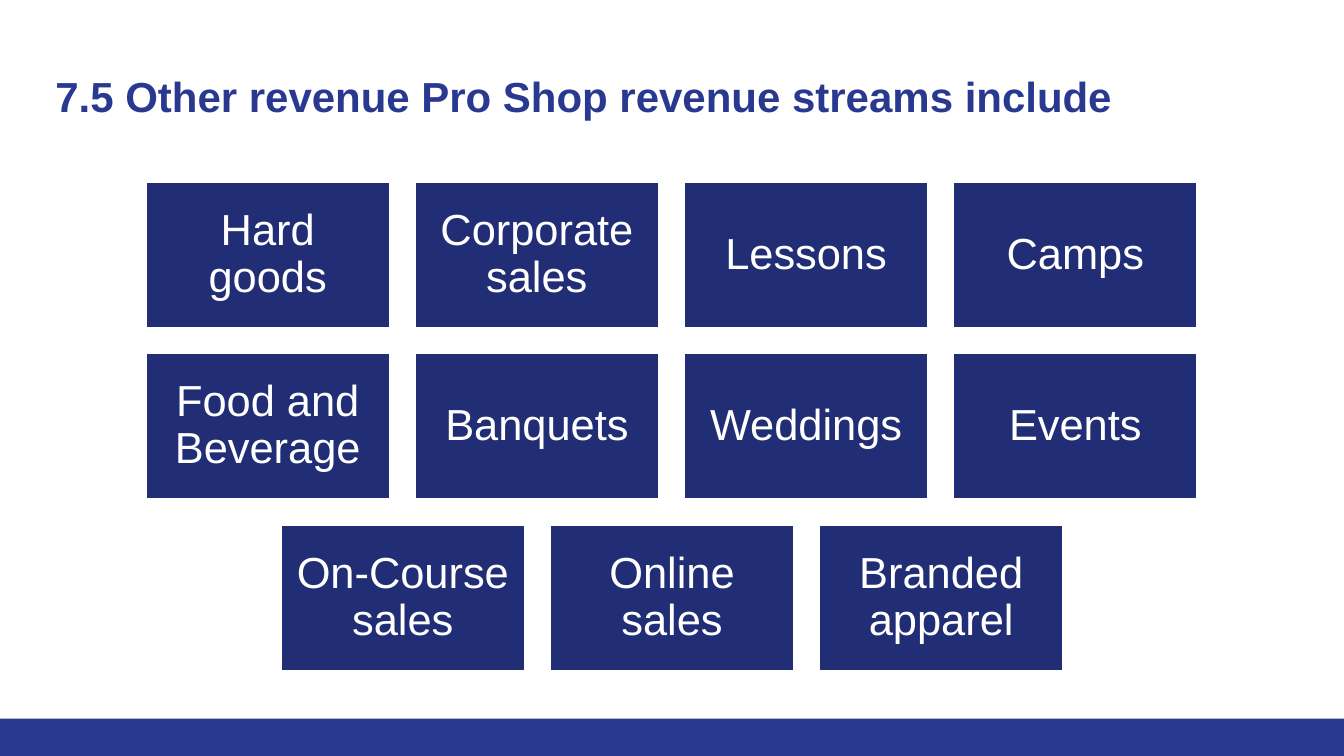
from pptx import Presentation
from pptx import util as u
from pptx.dml.color import RGBColor
from pptx.enum import shapes, text

PX = 9144  # EMU per px, 100 px to the inch
WIDTH, HEIGHT = 1333, 750
WHITE = RGBColor(0xFF, 0xFF, 0xFF)
BLUE = RGBColor(0x2A, 0x39, 0x90)
NAVY = RGBColor(0x21, 0x2D, 0x74)

STREAMS = [
    ["Hard goods", "Corporate sales", "Lessons", "Camps"],
    ["Food and Beverage", "Banquets", "Weddings", "Events"],
    ["On-Course sales", "Online sales", "Branded apparel"],
]
TILE_W, TILE_H, GAP, TOP = 243, 146, 24, 180


class Deck:
    font = "Arial"

    def __init__(self):
        self.prs = Presentation()
        self.prs.slide_width, self.prs.slide_height = WIDTH * PX, HEIGHT * PX
        self.s = self.prs.slides.add_slide(self.prs.slide_layouts[6])

    def label(self, sp, words, size, color, inset, bold=False):
        tf = sp.text_frame
        tf.word_wrap = True
        tf.margin_left = tf.margin_right = inset * PX
        tf.margin_top = tf.margin_bottom = inset * PX
        tf.text = words
        p = tf.paragraphs[0]
        f = p.runs[0].font
        f.name, f.size, f.bold = self.font, u.Pt(size), bold
        f.color.rgb = color
        return tf, p

    def title(self, words, x, y, w, h):
        sp = self.s.shapes.add_textbox(x * PX, y * PX, w * PX, h * PX)
        tf, p = self.label(sp, words, 30, BLUE, 10, bold=True)
        tf.vertical_anchor = text.MSO_ANCHOR.TOP

    def rect(self, x, y, w, h, fill):
        sp = self.s.shapes.add_shape(
            shapes.MSO_SHAPE.RECTANGLE, x * PX, y * PX, w * PX, h * PX)
        sp.shadow.inherit = False
        sp.fill.solid()
        sp.fill.fore_color.rgb = fill
        sp.line.fill.background()
        return sp

    def tile(self, words, x, y):
        sp = self.rect(x, y, TILE_W, TILE_H, NAVY)
        sp.line.color.rgb = WHITE
        sp.line.width = u.Pt(2)
        tf, p = self.label(sp, words, 31, WHITE, 13)
        tf.vertical_anchor = text.MSO_ANCHOR.MIDDLE
        p.alignment = text.PP_ALIGN.CENTER
        p.line_spacing = 0.9


def main():
    deck = Deck()

    # Footer band and title
    deck.rect(0, 713, WIDTH, 37, BLUE)
    deck.title("7.5 Other revenue Pro Shop revenue streams include",
               45, 60, 1242, 89)

    # Revenue streams, each row centred on the slide
    for i, row in enumerate(STREAMS):
        row_w = len(row) * (TILE_W + GAP) - GAP
        left = (WIDTH - row_w) // 2
        for j, stream in enumerate(row):
            deck.tile(stream, left + j * (TILE_W + GAP),
                      TOP + i * (TILE_H + GAP))

    deck.prs.save("out.pptx")


if __name__ == "__main__":
    main()
